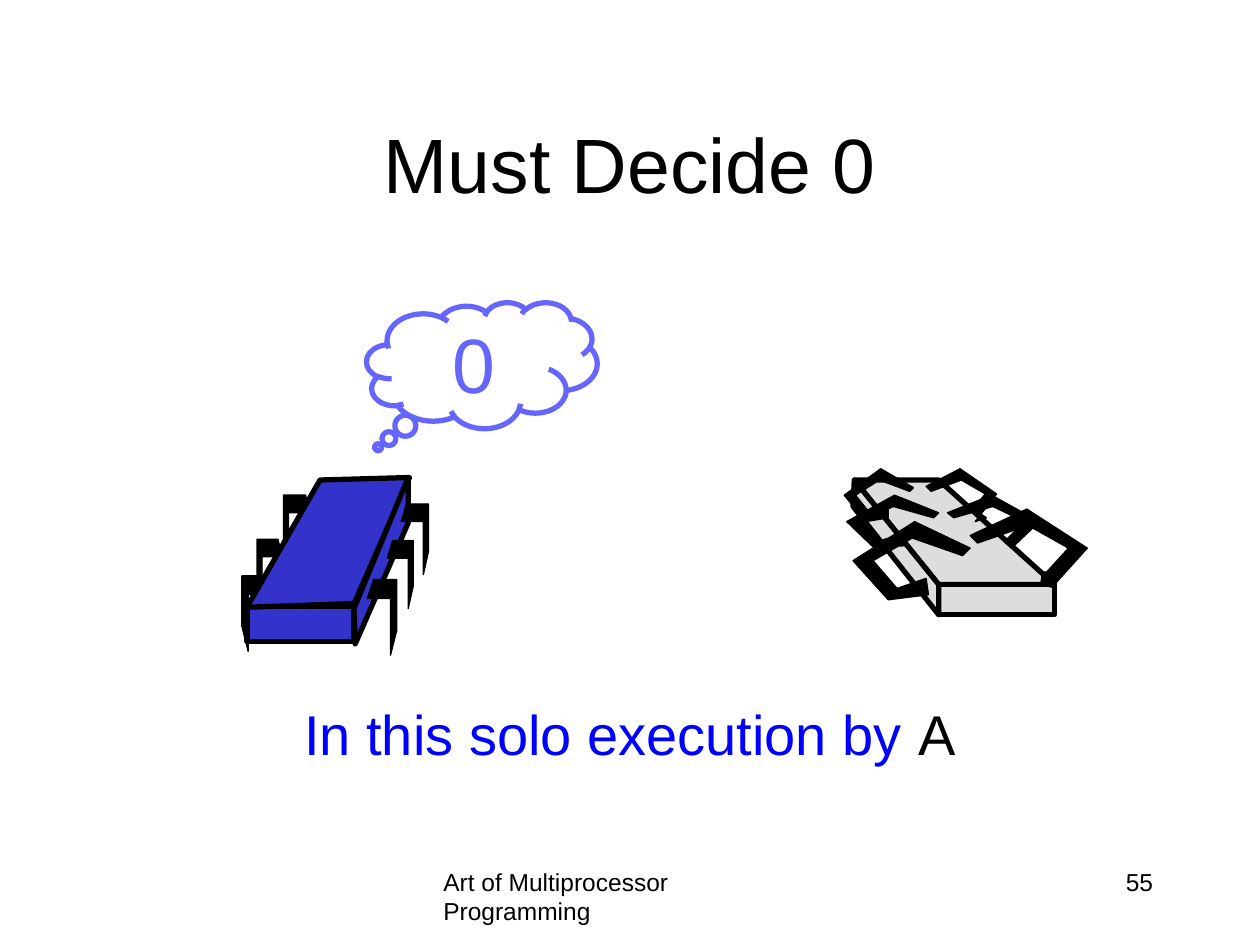
from dataclasses import dataclass

from lxml import etree
from pptx import Presentation
from pptx.dml.color import RGBColor
from pptx.enum.shapes import MSO_SHAPE
from pptx.enum.text import MSO_ANCHOR, MSO_AUTO_SIZE, PP_ALIGN
from pptx.oxml.ns import qn
from pptx.shapes.autoshape import Shape
from pptx.shapes.shapetree import GroupShapes
from pptx.text.text import TextFrame, _Paragraph
from pptx.util import Pt

RECTANGLE, CLOUD = MSO_SHAPE.RECTANGLE, MSO_SHAPE.CLOUD_CALLOUT
LEFT, CENTER, RIGHT = PP_ALIGN.LEFT, PP_ALIGN.CENTER, PP_ALIGN.RIGHT
TOP, MIDDLE = MSO_ANCHOR.TOP, MSO_ANCHOR.MIDDLE

EMU_PER_PX = 9144  # 100 px to the inch
FONT = "Arial"
COLORS = {
    "black": "000000",
    "statement": "0000FF",
    "active": "3333CC",
    "idle": "DDDDDD",
    "thought": "6666FF",
}
OUTLINE, HAIRLINE = 3, 0.75

Points = list[tuple[int, int]]


@dataclass
class Area:
    left: int
    top: int
    width: int
    height: int

    def emu(self) -> list[int]:
        return [v * EMU_PER_PX for v in (self.left, self.top, self.width, self.height)]


@dataclass
class Leg:
    """A bent leg; side is 1 when it bends towards the right, -1 to the left."""
    outer: int
    top: int
    width: int
    height: int
    side: int

    def points(self) -> Points:
        shares = [(0.8, 0), (0, 0), (0, 0.67), (0.2, 1), (0.2, 0.25), (1, 0.25)]
        return [(self.outer + self.side * round(self.width * x),
                 self.top + round(self.height * y)) for x, y in shares]


LEFT_LEGS = [Leg(192, 457, 24, 60, 1), Leg(204, 428, 21, 54, 1), Leg(225, 393, 22, 56, 1)]
RIGHT_LEGS = [Leg(315, 460, 24, 60, -1), Leg(328, 429, 21, 54, -1), Leg(340, 400, 22, 56, -1)]
ACTIVE_FACES: list[Points] = [
    [(196, 482), (281, 479), (325, 379), (254, 381)],
    [(324, 379), (324, 415), (282, 511), (281, 483)],
]
IDLE_TOP: Points = [(678, 381), (745, 464), (837, 464), (745, 381)]
IDLE_SIDE: Points = [(678, 381), (677, 402), (745, 488), (745, 464)]
IDLE_LEGS: list[Points] = [
    [(735, 459), (737, 472), (705, 476), (677, 445), (726, 414),
     (770, 435), (764, 441), (724, 427), (693, 445), (712, 467)],
    [(718, 423), (719, 433), (694, 435), (672, 414), (710, 393),
     (745, 407), (741, 411), (709, 402), (685, 414), (699, 429)],
    [(705, 402), (705, 411), (687, 414), (670, 393), (699, 372),
     (725, 387), (722, 390), (698, 381), (679, 393), (691, 408)],
    [(794, 422), (797, 430), (803, 435), (825, 414), (787, 393),
     (752, 407), (757, 411), (788, 402), (813, 414), (798, 429)],
    [(770, 402), (783, 411), (774, 414), (791, 392), (762, 372),
     (735, 386), (739, 390), (763, 381), (782, 392), (770, 407)],
    [(831, 459), (827, 457), (826, 464), (835, 466), (863, 435),
     (815, 404), (770, 425), (776, 431), (816, 417), (848, 435),
     (828, 457), (831, 454), (824, 454)],
]


def style(shape: Shape, fill: str | None, line: str, width: float) -> None:
    shape.shadow.inherit = False
    if fill:
        shape.fill.solid()
        shape.fill.fore_color.rgb = RGBColor.from_string(COLORS[fill])
    else:
        shape.fill.background()
    shape.line.color.rgb = RGBColor.from_string(COLORS[line])
    shape.line.width = Pt(width)


def add_polygon(shapes: GroupShapes, points: Points, fill: str,
                width: float, close: bool = True) -> None:
    builder = shapes.build_freeform(*points[0], scale=EMU_PER_PX)
    builder.add_line_segments(points[1:], close=close)
    style(builder.convert_to_shape(), fill, "black", width)


def add_rectangle(shapes: GroupShapes, area: Area, fill: str) -> None:
    style(shapes.add_shape(RECTANGLE, *area.emu()), fill, "black", OUTLINE)


def add_legs(shapes: GroupShapes, legs: list[Leg]) -> None:
    for leg in legs:
        add_polygon(shapes, leg.points(), "black", HAIRLINE, close=False)


def add_active_thread(shapes: GroupShapes) -> None:
    add_rectangle(shapes, Area(196, 481, 85, 28), "active")
    add_legs(shapes, LEFT_LEGS)
    for face in ACTIVE_FACES:
        add_polygon(shapes, face, "active", OUTLINE)
    add_legs(shapes, RIGHT_LEGS)


def add_idle_thread(shapes: GroupShapes) -> None:
    add_polygon(shapes, IDLE_TOP, "idle", OUTLINE)
    add_rectangle(shapes, Area(745, 464, 92, 24), "idle")
    add_polygon(shapes, IDLE_SIDE, "idle", OUTLINE)
    for leg in IDLE_LEGS:
        add_polygon(shapes, leg, "black", HAIRLINE)


def write(frame: TextFrame, spans: list[tuple[str, str]], size: int,
          align: PP_ALIGN, anchor: MSO_ANCHOR = TOP) -> _Paragraph:
    """Fill the first paragraph with (text, colour name) spans."""
    frame.word_wrap = True
    frame.auto_size = MSO_AUTO_SIZE.NONE
    frame.vertical_anchor = anchor
    para = frame.paragraphs[0]
    para.alignment = align
    para.space_before = Pt(0)
    for text, color in spans:
        span = para.add_run()
        span.text = text
        span.font.name = FONT
        span.font.size = Pt(size)
        span.font.color.rgb = RGBColor.from_string(COLORS[color])
    return para


def place(shape: Shape, area: Area) -> None:
    shape.left, shape.top, shape.width, shape.height = area.emu()


def main() -> None:
    deck = Presentation()
    deck.slide_width, deck.slide_height = 1000 * EMU_PER_PX, 750 * EMU_PER_PX
    page = deck.slides.add_slide(deck.slide_layouts[1])

    footer = page.shapes.add_textbox(*Area(342, 683, 317, 50).emu())
    write(footer.text_frame, [("Art of Multiprocessor Programming", "black")], 14, LEFT)
    number = page.shapes.add_textbox(*Area(717, 683, 208, 50).emu())
    write(number.text_frame, [("55", "black")], 14, RIGHT)

    title = page.shapes.title
    place(title, Area(75, 67, 850, 125))
    write(title.text_frame, [("Must Decide 0", "black")], 44, CENTER, MIDDLE)

    body = page.placeholders[1]
    place(body, Area(75, 550, 850, 117))
    statement = write(body.text_frame, [("In this solo execution by ", "statement"),
                                        ("A", "black")], 32, CENTER)
    properties = statement._p.get_or_add_pPr()
    properties.set("marL", str(38 * EMU_PER_PX))
    properties.set("indent", str(-38 * EMU_PER_PX))
    etree.SubElement(properties, qn("a:buNone"))

    add_active_thread(page.shapes.add_group_shape().shapes)
    add_idle_thread(page.shapes.add_group_shape().shapes)

    thought = page.shapes.add_shape(CLOUD, *Area(291, 240, 183, 100).emu())
    thought.adjustments[0], thought.adjustments[1] = -0.45, 0.65
    style(thought, None, "thought", OUTLINE)
    write(thought.text_frame, [("0", "thought")], 44, CENTER, MIDDLE)

    deck.save("out.pptx")


if __name__ == "__main__":
    main()
